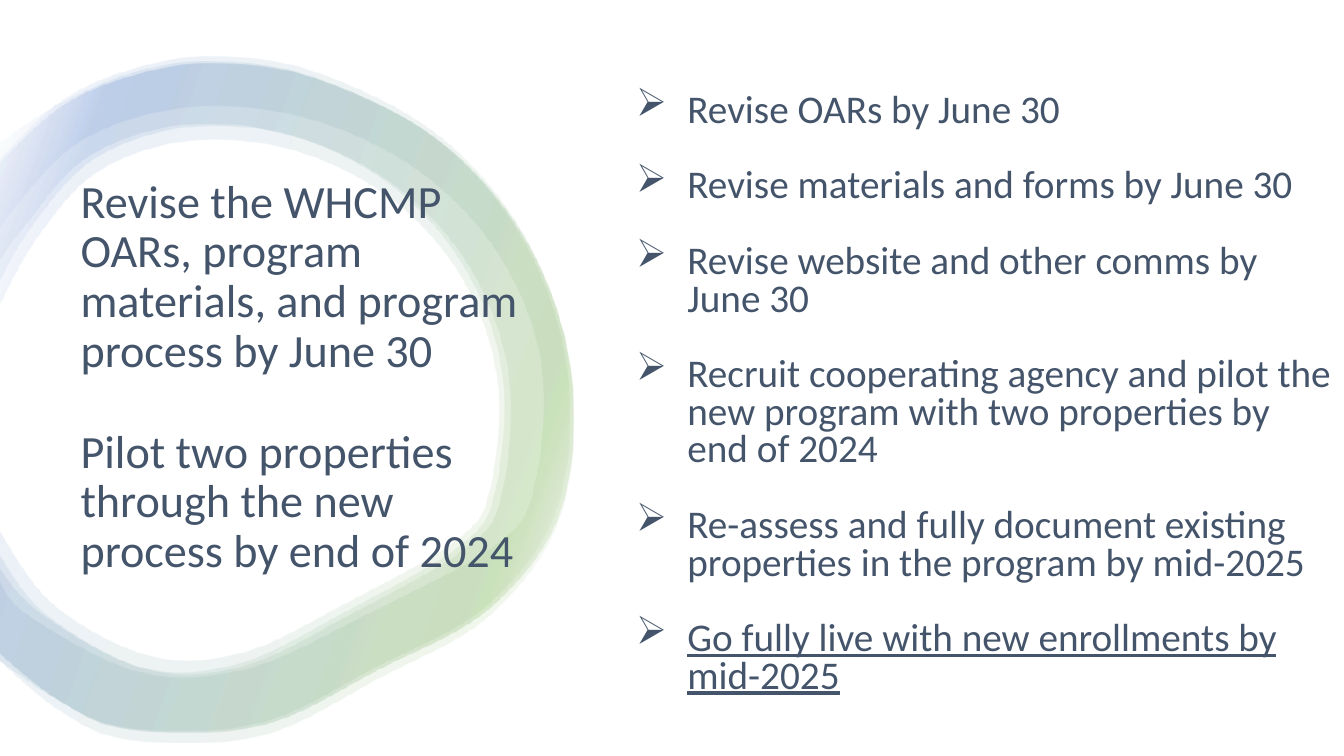
"""Build the goals slide: a soft ring behind the aims, and a list of dated steps."""
import dataclasses
import typing

import lxml.etree
import pptx
import pptx.dml.color
import pptx.enum.shapes
import pptx.enum.text
import pptx.oxml.ns
import pptx.util

Point = tuple[float, float]
Inches = pptx.util.Inches
Pt = pptx.util.Pt
qn = pptx.oxml.ns.qn

COLORS = {"white": "FFFFFF", "green": "70AD47", "blue": "4472C4", "ink": "44546A"}
STOPS = [(2, "white"), (16, "green"), (85, "blue"), (100, "white")]
ALPHA = 10
STEPS = 8
LEFT = -0.02
CENTER = (2.1, 3.96)

OUTER = [(.62, 1.05), (1.35, .74), (2.11, .63), (3.1, .77), (4.33, 1.38), (5.2, 2.37),
         (5.65, 3.65), (5.56, 5.04), (4.86, 6.02), (3.76, 6.63), (2.59, 7.19),
         (1.29, 7.23), (.6, 6.95)]
INNER = [(.46, 6.09), (1.45, 6.63), (2.41, 6.6), (3.45, 6.1), (4.63, 5.42), (4.97, 4.88),
         (5.04, 3.73), (4.67, 2.68), (3.94, 1.86), (2.94, 1.36), (1.87, 1.26),
         (.93, 1.58), (.31, 2.26)]


@dataclasses.dataclass
class Edge:
    knots: list[Point]
    start: float
    end: float
    scale: Point = (1, 1)
    shift: Point = (0, 0)


@dataclasses.dataclass
class Block:
    box: tuple[float, float, float, float]
    lines: list[str]
    size: int
    spacing: float
    gap: int
    foot: float = 0.05
    indent: float = 0
    bullet: str = ""
    under: int = -1


BROAD = Edge(OUTER, 1.63, 6.46)
RINGS = [
    (Edge(OUTER, 1.6, 6.53, scale=(1, 1.025), shift=(0, .02)),
     Edge(INNER, 5.72, 2.36, scale=(1.11, 1.04), shift=(0, -.08))),
    (Edge(OUTER, 1.43, 6.53, shift=(-.03, -.02)),
     Edge(INNER, 5.61, 2.61, shift=(-.06, -.02))),
    (BROAD, Edge(INNER, 5.23, 3.06, scale=(.96, .95))),
    (BROAD, Edge(INNER, 5.47, 2.83)),
]

BLOCKS = [
    Block((0.7, 1.36, 4.81, 4.78),
          ["Revise the WHCMP OARs, program materials, and program process by June 30",
           "Pilot two properties through the new process by end of 2024"],
          size=33, spacing=0.9, gap=36),
    Block((6.21, 1, 7.12, 6.3),
          ["Revise OARs by June 30",
           "Revise materials and forms by June 30",
           "Revise website and other comms by June 30",
           "Recruit cooperating agency and pilot the new program with two properties "
           "by end of 2024",
           "Re-assess and fully document existing properties in the program by mid-2025",
           "Go fully live with new enrollments by mid-2025"],
          size=28, spacing=0.8, gap=27, foot=0.51, indent=0.51, bullet="➢", under=5),
]


def tint(name: str) -> pptx.dml.color.RGBColor:
    return pptx.dml.color.RGBColor.from_string(COLORS[name])


def assign(target: typing.Any, values: dict[str, typing.Any]) -> None:
    for name, value in values.items():
        setattr(target, name, value)


def trace(edge: Edge) -> list[Point]:
    knots = [tuple(mid + (value - mid) * scale + shift for value, mid, scale, shift
                   in zip(knot, CENTER, edge.scale, edge.shift)) for knot in edge.knots]
    first, last = (LEFT, edge.start), (LEFT, edge.end)
    ends = [first, first, *knots, last, last]
    curve = []
    for a, b, c, d in zip(ends, ends[1:], ends[2:], ends[3:]):
        for step in range(STEPS):
            t = step / STEPS
            curve.append(tuple(
                q + t * (r - p) / 2 + t * t * (2 * p - 5 * q + 4 * r - s) / 2
                + t ** 3 * (3 * q - p - 3 * r + s) / 2
                for p, q, r, s in zip(a, b, c, d)))
    return [*curve, last]


def shade(shape: typing.Any) -> None:
    shape.fill.gradient()
    shape.fill.gradient_angle = 160
    stops = shape.element.spPr.find(qn("a:gradFill")).find(qn("a:gsLst"))
    for stop in list(stops):
        stops.remove(stop)
    for place, name in STOPS:
        stop = lxml.etree.SubElement(stops, qn("a:gs"), pos=str(place * 1000))
        color = lxml.etree.SubElement(stop, qn("a:srgbClr"), val=COLORS[name])
        lxml.etree.SubElement(color, qn("a:alpha"), val=str(ALPHA * 1000))


def draw_ring(shapes: typing.Any, outer: Edge, inner: Edge) -> None:
    start, *rest = [(Inches(x), Inches(y)) for x, y in trace(outer) + trace(inner)]
    pen = shapes.build_freeform(*start)
    pen.add_line_segments(rest, close=True)
    shape = pen.convert_to_shape()
    shape.shadow.inherit = False
    shape.line.fill.background()
    shade(shape)


def draw_block(shapes: typing.Any, block: Block) -> None:
    frame = shapes.add_textbox(*map(Inches, block.box)).text_frame
    assign(frame, {"word_wrap": True, "margin_bottom": Inches(block.foot),
                   "vertical_anchor": pptx.enum.text.MSO_ANCHOR.MIDDLE})
    for index, line in enumerate(block.lines):
        para = frame.paragraphs[0] if index == 0 else frame.add_paragraph()
        if block.bullet:
            props = para._p.get_or_add_pPr()
            props.set("marL", str(Inches(block.indent)))
            props.set("indent", str(-Inches(block.indent)))
            lxml.etree.SubElement(props, qn("a:buChar"), char=block.bullet)
        assign(para, {"line_spacing": block.spacing,
                      "space_before": Pt(block.gap if index else 0)})
        run = para.add_run()
        run.text = line
        assign(run.font, {"name": "Calibri", "size": Pt(block.size)})
        run.font.color.rgb = tint("ink")
        if index == block.under:
            run.font.underline = True


def main() -> None:
    deck = pptx.Presentation()
    assign(deck, {"slide_width": Inches(13.33), "slide_height": Inches(7.5)})
    shapes = deck.slides.add_slide(deck.slide_layouts[6]).shapes
    back = shapes.add_shape(pptx.enum.shapes.MSO_SHAPE.RECTANGLE, 0, 0,
                            deck.slide_width, deck.slide_height)
    back.shadow.inherit = False
    back.fill.solid()
    back.fill.fore_color.rgb = tint("white")
    back.line.fill.background()
    group = shapes.add_group_shape()
    for outer, inner in RINGS:
        draw_ring(group.shapes, outer, inner)
    for block in BLOCKS:
        draw_block(shapes, block)
    deck.save("out.pptx")


if __name__ == "__main__":
    main()
